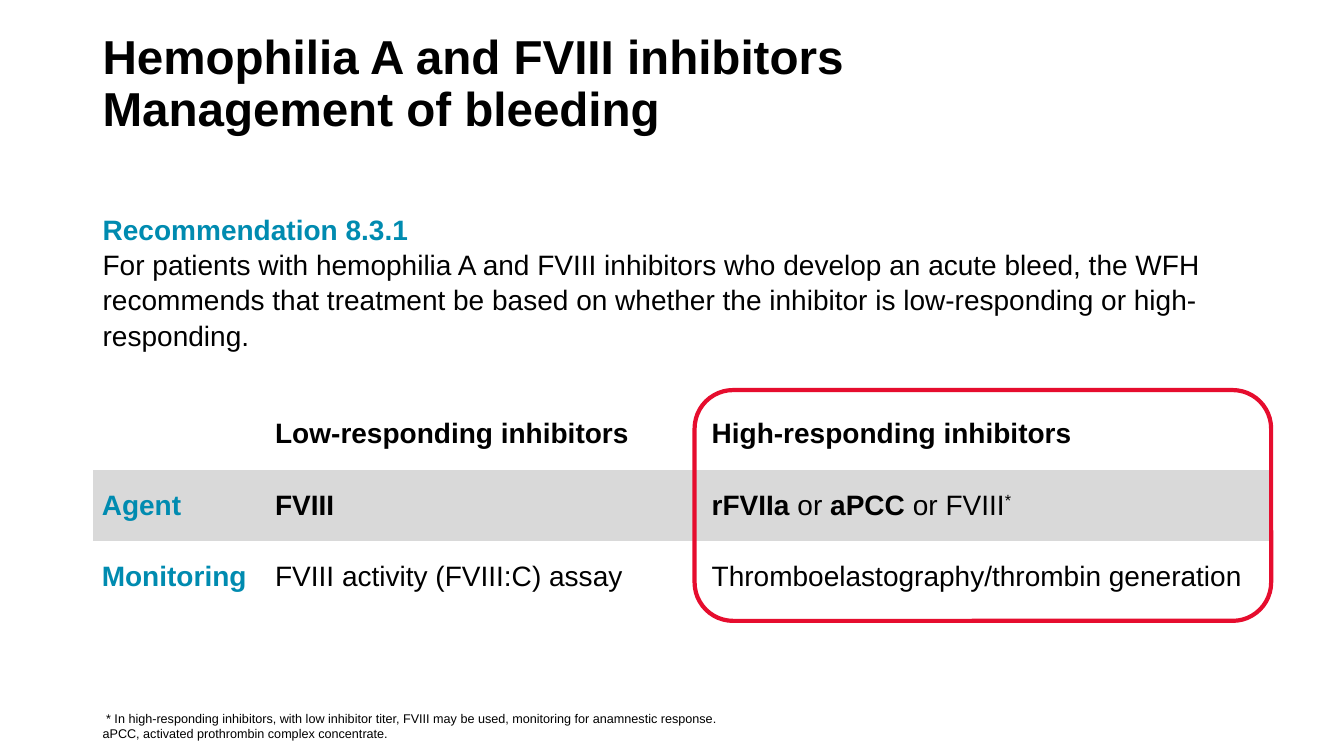
from dataclasses import dataclass

import pptx
import pptx.dml.color
import pptx.enum.shapes
import pptx.enum.text
import pptx.util

COLORS = {"text": "000000", "teal": "008BB0", "band": "D9D9D9", "white": "FFFFFF", "red": "E60D2E"}
FONT = "Arial"
WIDTH, HEIGHT = pptx.util.Inches(13.33), pptx.util.Inches(7.5)
NO_GRID_STYLE = "{2D5ABB26-0587-4C30-8999-92F81FD0307C}"
LEFT = 6.9
COLUMNS = (12.9, 32.48, 42.37)
ROW = 9.47
ANCHOR = pptx.enum.text.MSO_ANCHOR


@dataclass(frozen=True)
class Box:
    """Position and size in percent of the slide."""
    x: float
    y: float
    w: float
    h: float

    def emu(self) -> tuple[int, int, int, int]:
        """Return left, top, width and height."""
        return across(self.x), down(self.y), across(self.w), down(self.h)


@dataclass(frozen=True)
class Run:
    """A stretch of text in one format."""
    text: str
    bold: bool = False
    color: str = "text"
    raised: bool = False


@dataclass(frozen=True)
class Block:
    """A text box with its paragraphs."""
    box: Box
    size: float
    paragraphs: tuple[tuple[Run, ...], ...]
    anchor: ANCHOR = ANCHOR.TOP
    spacing: float = 1.0
    bottom: float = 0.05


BLOCKS = (
    Block(Box(LEFT, 3.33, 86.25, 15.87), 34,
          ((Run("Hemophilia A and FVIII inhibitors\vManagement of bleeding", True),),),
          ANCHOR.MIDDLE, 0.9),
    Block(Box(LEFT, 27.2, 86.25, 21.3), 20,
          ((Run("Recommendation 8.3.1", True, "teal"),),
           (Run("For patients with hemophilia A and FVIII inhibitors who develop an acute bleed, "
                "the WFH recommends that treatment be based on whether the inhibitor is "
                "low-responding or high-responding."),)),
          spacing=1.05),
    Block(Box(LEFT, 92.67, 81.38, 5.33), 9,
          ((Run(" * In high-responding inhibitors, with low inhibitor titer, FVIII may be used, "
                "monitoring for anamnestic response."),),
           (Run("aPCC, activated prothrombin complex concentrate."),)),
          ANCHOR.BOTTOM, bottom=0),
)
TABLE = (
    ((), (Run("Low-responding inhibitors", True),), (Run("High-responding inhibitors", True),)),
    ((Run("Agent", True, "teal"),), (Run("FVIII", True),),
     (Run("rFVIIa", True), Run(" or "), Run("aPCC ", True), Run("or FVIII"),
      Run("*", raised=True))),
    ((Run("Monitoring", True, "teal"),), (Run("FVIII activity (FVIII:C) assay"),),
     (Run("Thromboelastography/thrombin generation"),)),
)
ROW_FILLS = ("white", "band", "white")
HIGHLIGHT = Box(51.68, 51.6, 42.9, 30.53)


def across(share: float) -> int:
    """Turn a percentage of the slide width into EMU."""
    return round(WIDTH * share / 100)


def down(share: float) -> int:
    """Turn a percentage of the slide height into EMU."""
    return round(HEIGHT * share / 100)


def rgb(name: str) -> pptx.dml.color.RGBColor:
    """Look up a named colour."""
    return pptx.dml.color.RGBColor.from_string(COLORS[name])


def add_runs(p, runs: tuple[Run, ...], size: float) -> None:
    """Write formatted runs into a paragraph."""
    for run in runs:
        for i, line in enumerate(run.text.split("\v")):
            if i:
                p.add_line_break()
            r = p.add_run()
            r.text = line
            r.font.name, r.font.size, r.font.bold = FONT, pptx.util.Pt(size), run.bold
            r.font.color.rgb = rgb(run.color)
            if run.raised:
                r.font._element.set("baseline", "30000")


def add_block(s, block: Block) -> None:
    """Draw a text box."""
    tf = s.shapes.add_textbox(*block.box.emu()).text_frame
    tf.word_wrap = True
    tf.vertical_anchor = block.anchor
    tf.margin_bottom = pptx.util.Inches(block.bottom)
    for i, runs in enumerate(block.paragraphs):
        p = tf.add_paragraph() if i else tf.paragraphs[0]
        p.line_spacing = block.spacing
        add_runs(p, runs, block.size)


def add_comparison(s) -> None:
    """Draw the table of agents and monitoring."""
    box = Box(LEFT, 52.67, sum(COLUMNS), ROW * len(TABLE))
    table = s.shapes.add_table(len(TABLE), len(COLUMNS), *box.emu()).table
    table.first_row = table.horz_banding = False
    table._tbl.tblPr[0].text = NO_GRID_STYLE
    for column, share in zip(table.columns, COLUMNS):
        column.width = across(share)
    for row, contents, fill in zip(table.rows, TABLE, ROW_FILLS):
        row.height = down(ROW)
        for cell, runs in zip(row.cells, contents):
            cell.fill.solid()
            cell.fill.fore_color.rgb = rgb(fill)
            cell.vertical_anchor = ANCHOR.MIDDLE
            cell.margin_left = cell.margin_right = pptx.util.Inches(0.09)
            cell.margin_top = cell.margin_bottom = pptx.util.Inches(0.03)
            add_runs(cell.text_frame.paragraphs[0], runs, 20)


def add_highlight(s) -> None:
    """Frame the high-responding column."""
    sp = s.shapes.add_shape(pptx.enum.shapes.MSO_SHAPE.ROUNDED_RECTANGLE, *HIGHLIGHT.emu())
    sp.shadow.inherit = False
    sp.fill.background()
    sp.line.color.rgb = rgb("red")
    sp.line.width = pptx.util.Pt(3)


def main() -> None:
    """Build and save the slide."""
    prs = pptx.Presentation()
    prs.slide_width, prs.slide_height = WIDTH, HEIGHT
    s = prs.slides.add_slide(prs.slide_layouts[6])
    for block in BLOCKS:
        add_block(s, block)
    add_comparison(s)
    add_highlight(s)
    prs.save("out.pptx")


if __name__ == "__main__":
    main()
